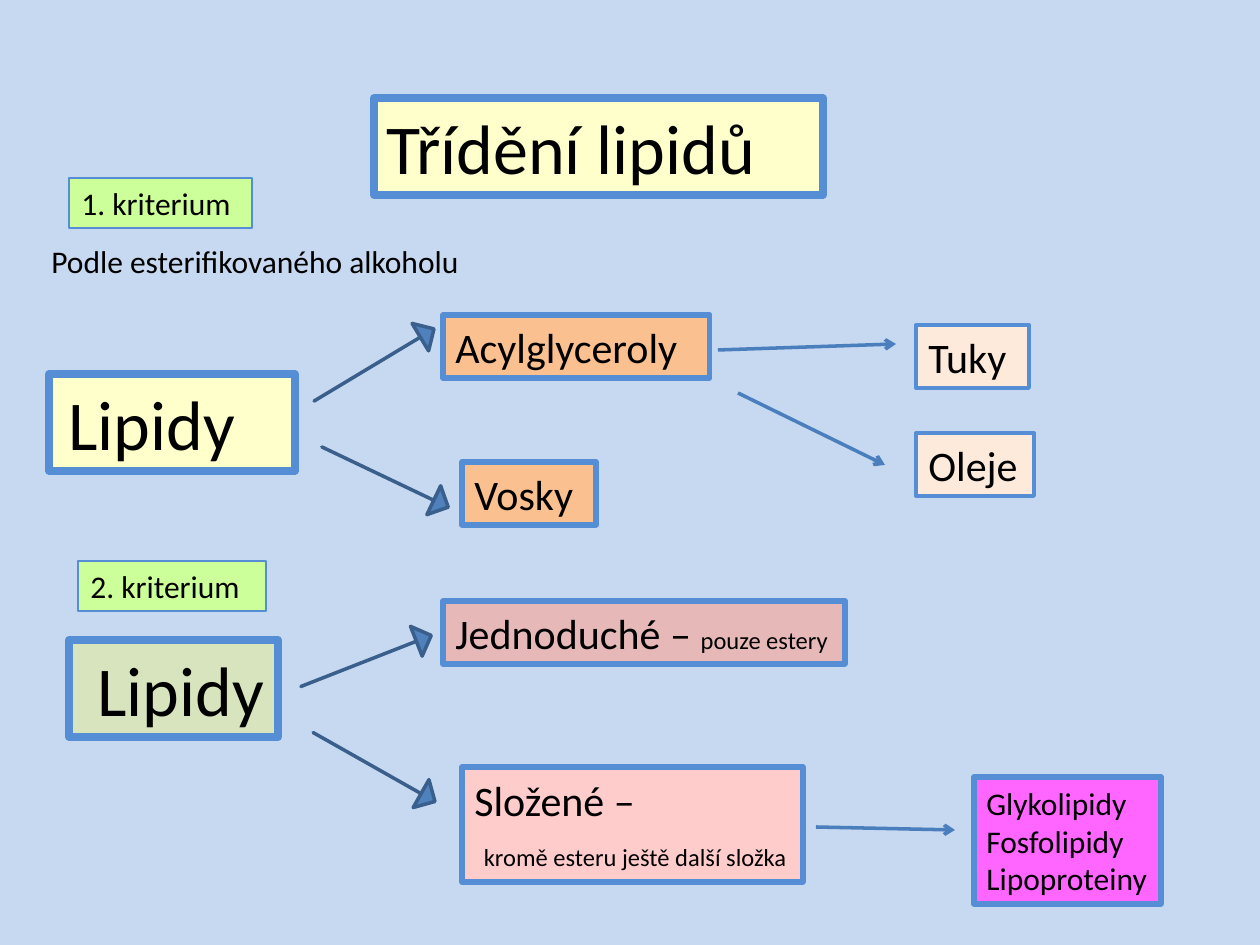
"""Build the slide on the classification of lipids."""
from dataclasses import dataclass

from lxml import etree
from pptx import Presentation
from pptx.dml.color import RGBColor
from pptx.enum.shapes import MSO_CONNECTOR, MSO_SHAPE
from pptx.enum.text import MSO_ANCHOR, MSO_AUTO_SIZE, PP_ALIGN
from pptx.oxml.ns import qn
from pptx.util import Emu, Pt

RECTANGLE = MSO_SHAPE.RECTANGLE
LEFT_ARROW = MSO_SHAPE.LEFT_ARROW
STRAIGHT = MSO_CONNECTOR.STRAIGHT
LEFT = PP_ALIGN.LEFT
MIDDLE = MSO_ANCHOR.MIDDLE
NO_AUTOFIT = MSO_AUTO_SIZE.NONE

PX_PER_INCH = 126
FONT = "Calibri"
COLORS = {
    "background": "C6D9F1",
    "text": "000000",
    "border": "558ED5",
    "cream": "FFFFCC",
    "sage": "D7E4BD",
    "lime": "CCFF99",
    "orange": "FAC090",
    "peach": "FDEADA",
    "rose": "E6B9B8",
    "pink": "FFCCCC",
    "magenta": "FF66FF",
    "arrow": "4F81BD",
    "arrow_edge": "3A5F8C",
    "link": "4B7EBC",
}

Runs = list[tuple[str, int]]


@dataclass(frozen=True)
class Box:
    left: int
    top: int
    width: int
    height: int
    paragraphs: list[Runs]
    fill: str | None = None
    border: float = 0


@dataclass(frozen=True)
class Arrow:
    left: int
    top: int
    rotation: float


@dataclass(frozen=True)
class Link:
    start: tuple[int, int]
    end: tuple[int, int]


TITLE = Box(374, 98, 449, 97, [[("Třídění lipidů", 40)]], "cream", 4.5)
BOXES = [
    Box(69, 178, 183, 50, [[("1. kriterium", 18)]], "lime", 1),
    Box(39, 236, 464, 50, [[("Podle esterifikovaného alkoholu", 18)]]),
    Box(49, 374, 246, 97, [[(" ", 18), ("Lipidy", 40)]], "cream", 4.5),
    Box(443, 315, 267, 63, [[("Acylglyceroly", 24)]], "orange", 3),
    Box(462, 462, 134, 63, [[("Vosky", 24)]], "orange", 3),
    Box(916, 325, 113, 63, [[("Tuky", 24)]], "peach", 2.25),
    Box(916, 433, 118, 63, [[("Oleje", 24)]], "peach", 2.25),
    Box(78, 561, 188, 50, [[("2. kriterium", 18)]], "lime", 0.75),
    Box(69, 640, 209, 97, [[(" Lipidy", 40)]], "sage", 4.5),
    Box(443, 601, 402, 63, [[("Jednoduché – ", 24), ("pouze estery", 14)]], "rose", 3),
    Box(462, 767, 341, 115,
        [[("Složené –", 24)], [(" ", 24), ("kromě esteru ještě další složka", 14)]], "pink", 3),
    Box(974, 777, 187, 127,
        [[(name, 18)] for name in ("Glykolipidy", "Fosfolipidy", "Lipoproteiny")], "magenta", 3),
]
ARROWS = [
    Arrow(304, 349, 149),
    Arrow(315, 461, 205.5),
    Arrow(296, 645, 158.6),
    Arrow(304, 751, 209.5),
]
LINKS = [
    Link((718, 350), (896, 344)),
    Link((738, 393), (885, 465)),
    Link((816, 827), (955, 830)),
]


def px(length: int) -> Emu:
    """Turn pixels into EMU."""
    return Emu(round(length * 914400 / PX_PER_INCH))


def color(name: str) -> RGBColor:
    """Look up a palette colour."""
    return RGBColor.from_string(COLORS[name])


def paint(shape, fill: str, edge: str, width: float) -> None:
    """Give a shape a solid fill and outline."""
    shape.fill.solid()
    shape.fill.fore_color.rgb = color(fill)
    shape.line.color.rgb = color(edge)
    shape.line.width = Pt(width)


def write(frame, paragraphs: list[Runs]) -> None:
    """Write left-aligned paragraphs into a text frame."""
    frame.word_wrap = True
    frame.auto_size = NO_AUTOFIT
    frame.vertical_anchor = MIDDLE
    frame.margin_right = 0
    for index, runs in enumerate(paragraphs):
        paragraph = frame.add_paragraph() if index else frame.paragraphs[0]
        paragraph.alignment = LEFT
        paragraph.font.name = FONT
        paragraph.font.color.rgb = color("text")
        for text, size in runs:
            run = paragraph.add_run()
            run.text = text
            run.font.size = Pt(size)


def draw_title(slide, box: Box) -> None:
    """Place and format the title placeholder."""
    title = slide.shapes.title
    title.left, title.top = px(box.left), px(box.top)
    title.width, title.height = px(box.width), px(box.height)
    paint(title, box.fill, "border", box.border)
    write(title.text_frame, box.paragraphs)


def draw_box(slide, box: Box) -> None:
    """Draw a framed box, or a plain text box when it has no fill."""
    bounds = [px(side) for side in (box.left, box.top, box.width, box.height)]
    if box.fill:
        shape = slide.shapes.add_shape(RECTANGLE, *bounds)
        shape.shadow.inherit = False
        paint(shape, box.fill, "border", box.border)
    else:
        shape = slide.shapes.add_textbox(*bounds)
    write(shape.text_frame, box.paragraphs)


def draw_arrow(slide, arrow: Arrow) -> None:
    """Draw a rotated block arrow with a thin shaft."""
    shape = slide.shapes.add_shape(LEFT_ARROW, px(arrow.left), px(arrow.top), px(140), px(32))
    shape.shadow.inherit = False
    shape.adjustments[0] = 0
    shape.adjustments[1] = 0.5
    shape.rotation = arrow.rotation
    paint(shape, "arrow", "arrow_edge", 2)


def draw_link(slide, link: Link) -> None:
    """Draw a thin line with an open arrowhead at its end."""
    points = [px(value) for value in (*link.start, *link.end)]
    connector = slide.shapes.add_connector(STRAIGHT, *points)
    connector.line.color.rgb = color("link")
    connector.line.width = Pt(2)
    etree.SubElement(connector.line._get_or_add_ln(), qn("a:tailEnd"), type="arrow")
    etree.SubElement(connector._element.spPr, qn("a:effectLst"))


def main() -> None:
    """Assemble and save the slide."""
    deck = Presentation()
    deck.slide_width, deck.slide_height = px(1260), px(945)
    slide = deck.slides.add_slide(deck.slide_layouts.get_by_name("Title Only"))
    slide.background.fill.solid()
    slide.background.fill.fore_color.rgb = color("background")
    draw_title(slide, TITLE)
    for draw, items in ((draw_box, BOXES), (draw_arrow, ARROWS), (draw_link, LINKS)):
        for item in items:
            draw(slide, item)
    deck.save("out.pptx")


if __name__ == "__main__":
    main()
